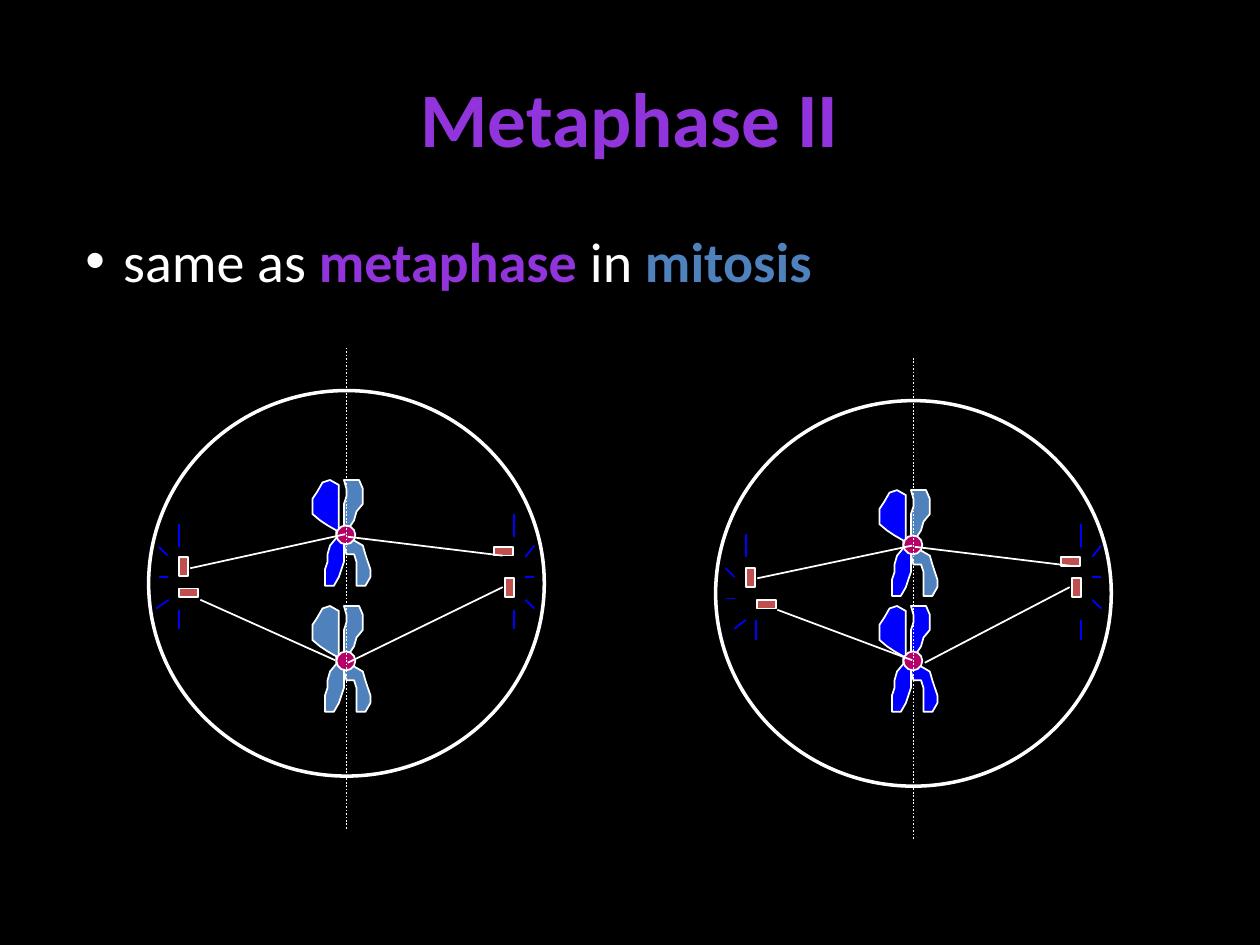
"""Build the Metaphase II slide with two dividing cells."""
from dataclasses import dataclass

from pptx import Presentation
from pptx.dml.color import RGBColor as RGB
from pptx.enum.dml import MSO_LINE
from pptx.enum.shapes import MSO_CONNECTOR, MSO_SHAPE
from pptx.enum.text import MSO_ANCHOR, PP_ALIGN
from pptx.oxml.xmlchemy import OxmlElement
from pptx.util import Inches, Pt


@dataclass(frozen=True)
class Theme:
    font: str = "Calibri"
    title_size: Pt = Pt(44)
    body_size: Pt = Pt(32)
    background: RGB = RGB(0x00, 0x00, 0x00)
    white: RGB = RGB(0xFF, 0xFF, 0xFF)
    purple: RGB = RGB(0x92, 0x34, 0xDB)
    steel: RGB = RGB(0x4F, 0x81, 0xBD)
    blue: RGB = RGB(0x00, 0x00, 0xFF)
    magenta: RGB = RGB(0xB5, 0x00, 0x69)
    red: RGB = RGB(0xC0, 0x50, 0x4D)


theme = Theme()


def paint(shape, fill=None, width=1):
    shape.shadow.inherit = False
    if fill is None:
        shape.fill.background()
    else:
        shape.fill.solid()
        shape.fill.fore_color.rgb = fill
    shape.line.color.rgb = theme.white
    shape.line.width = Pt(width)


def draw_line(shapes, x1, y1, x2, y2, color, dash=None):
    line = shapes.add_connector(
        MSO_CONNECTOR.STRAIGHT, Inches(x1), Inches(y1), Inches(x2), Inches(y2))
    line.line.color.rgb = color
    line.line.width = Pt(1)
    if dash is not None:
        line.line.dash_style = dash
    line._element.spPr.append(OxmlElement("a:effectLst"))


prs = Presentation()
prs.slide_width, prs.slide_height = Inches(10), Inches(7.5)
slide = prs.slides.add_slide(prs.slide_layouts[6])
slide.background.fill.solid()
slide.background.fill.fore_color.rgb = theme.background
shapes = slide.shapes

title = shapes.add_textbox(Inches(0.5), Inches(0.3), Inches(9), Inches(1.25)).text_frame
title.word_wrap = True
title.vertical_anchor = MSO_ANCHOR.MIDDLE
title.text = "Metaphase II"
heading = title.paragraphs[0]
heading.alignment = PP_ALIGN.CENTER
heading.runs[0].font.name = theme.font
heading.runs[0].font.size = theme.title_size
heading.runs[0].font.bold = True
heading.runs[0].font.color.rgb = theme.purple

body = shapes.add_textbox(Inches(0.5), Inches(1.75), Inches(9), Inches(4.95)).text_frame
body.word_wrap = True
point = body.paragraphs[0]
point.space_before = Pt(6.4)
for words, color, bold in [
    ("same as ", theme.white, False),
    ("metaphase", theme.purple, True),
    (" in ", theme.white, False),
    ("mitosis", theme.steel, True),
]:
    run = point.add_run()
    run.text = words
    run.font.name = theme.font
    run.font.size = theme.body_size
    run.font.bold = bold
    run.font.color.rgb = color
point_format = point._p.get_or_add_pPr()
point_format.set("marL", str(Inches(0.38)))
point_format.set("indent", str(Inches(-0.3)))
bullet_font = OxmlElement("a:buFont")
bullet_font.set("typeface", "Arial")
bullet = OxmlElement("a:buChar")
bullet.set("char", "•")
point_format.extend([bullet_font, bullet])

# Chromatid outlines are hundredths of an inch from the centromere.
left_chromatid = [
    (0, 0), (-6, -2), (-6, -8), (-6, -15), (-6, -21), (-6, -27), (-6, -33), (-6, -40),
    (-13, -44), (-19, -42), (-23, -35), (-27, -29), (-27, -23), (-27, -17), (-21, -12),
    (-15, -8), (-8, -4), (-8, 2), (-13, 8), (-15, 15), (-15, 21), (-17, 27), (-17, 33),
    (-17, 40), (-10, 40), (-6, 33), (-4, 27), (-2, 21), (-2, 15), (-2, 8), (-2, 2),
]
right_chromatid = [
    (0, 0), (-2, -6), (-2, -12), (-2, -19), (-2, -25), (0, -31), (0, -37), (-2, -44),
    (4, -44), (10, -44), (13, -37), (13, -31), (13, -25), (8, -19), (6, -12), (2, -6),
    (0, 0), (6, 4), (13, 8), (15, 15), (17, 21), (19, 27), (19, 33), (15, 40), (8, 40),
    (8, 33), (8, 27), (8, 21), (6, 15), (0, 15), (-2, 8), (-2, 2),
]
chromosomes = [
    (2.75, 5.25, theme.steel, theme.steel),
    (7.25, 4.33, theme.blue, theme.steel),
    (2.75, 4.25, theme.blue, theme.steel),
    (7.25, 5.25, theme.blue, theme.blue),
]
for x, y, left_color, right_color in chromosomes:
    for outline, color in [(left_chromatid, left_color), (right_chromatid, right_color)]:
        builder = shapes.build_freeform(*outline[0], scale=Inches(0.01))
        builder.add_line_segments(outline[1:], close=True)
        paint(builder.convert_to_shape(Inches(x), Inches(y)), color)
    centromere = shapes.add_shape(
        MSO_SHAPE.OVAL, Inches(x - 0.08), Inches(y - 0.08), Inches(0.15), Inches(0.15))
    paint(centromere, theme.magenta)

upright, flat = (0.07, 0.15), (0.15, 0.07)
cells = [
    {
        "plate": 2.75, "top": 3.1,
        "centrioles": [(4.01, 4.59, upright), (3.92, 4.34, flat),
                       (1.42, 4.42, upright), (1.42, 4.67, flat)],
        "asters": [(4.08, 4.26, 4.08, 4.08), (4.08, 4.84, 4.08, 4.99),
                   (1.34, 4.76, 1.24, 4.83), (1.26, 4.58, 1.33, 4.58),
                   (1.26, 4.34, 1.33, 4.41), (1.42, 4.34, 1.42, 4.16),
                   (1.42, 4.84, 1.42, 4.99)],
        "spindle": [(1.51, 4.51, 2.74, 4.24), (1.59, 4.76, 2.66, 5.24),
                    (2.76, 4.26, 3.99, 4.41), (2.76, 5.26, 3.99, 4.66)],
    },
    {
        "plate": 7.25, "top": 3.18,
        "centrioles": [(8.51, 4.59, upright), (8.42, 4.42, flat),
                       (5.92, 4.51, upright), (6.01, 4.76, flat)],
        "asters": [(8.58, 4.34, 8.58, 4.16), (8.58, 4.92, 8.58, 5.08),
                   (5.92, 4.92, 5.83, 4.99), (5.76, 4.75, 5.83, 4.75),
                   (5.76, 4.51, 5.83, 4.58), (5.92, 4.42, 5.92, 4.24),
                   (6, 4.92, 6, 5.08)],
        "spindle": [(6.01, 4.59, 7.24, 4.33), (6.17, 4.84, 7.24, 5.24),
                    (7.26, 4.34, 8.49, 4.49), (7.34, 5.26, 8.49, 4.66)],
    },
]
right_rays = [(4.42, 4.33), (4.58, 4.58), (4.76, 4.83)]
for cell in cells:
    plate, top = cell["plate"], cell["top"]
    membrane = shapes.add_shape(
        MSO_SHAPE.OVAL, Inches(plate - 1.57), Inches(top), Inches(3.14), Inches(3.06))
    paint(membrane, width=2)
    for x, y, (width, height) in cell["centrioles"]:
        centriole = shapes.add_shape(
            MSO_SHAPE.RECTANGLE, Inches(x), Inches(y), Inches(width), Inches(height))
        paint(centriole, theme.red)
    for start_y, end_y in right_rays:
        draw_line(shapes, plate + 1.42, start_y, plate + 1.49, end_y, theme.blue)
    for ray in cell["asters"]:
        draw_line(shapes, *ray, theme.blue)
    draw_line(shapes, plate, top - 0.34, plate, top + 3.48, theme.white, MSO_LINE.ROUND_DOT)
    for fiber in cell["spindle"]:
        draw_line(shapes, *fiber, theme.white)

prs.save("out.pptx")
